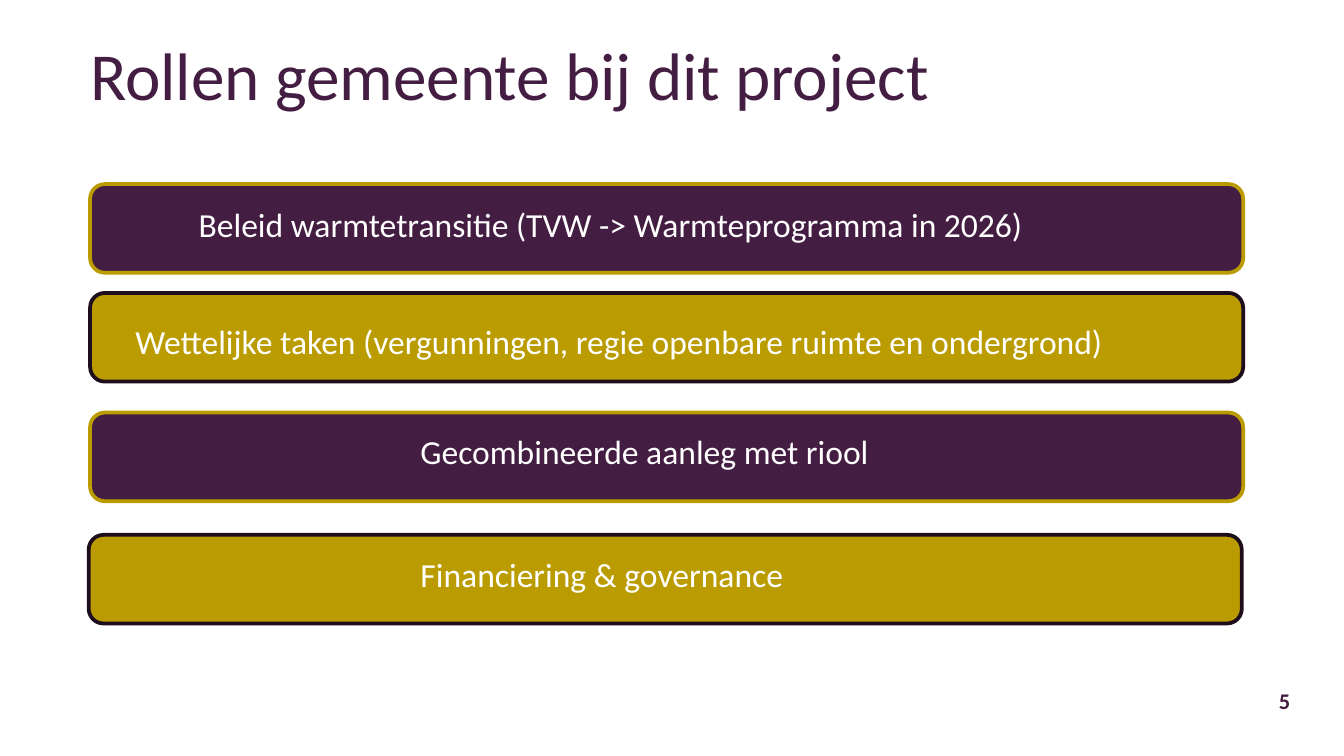
from pptx import Presentation, util as u
from pptx.dml.color import RGBColor
from pptx.enum import shapes, text

PURPLE = RGBColor(0x44, 0x1D, 0x42)
GOLD = RGBColor(0xBB, 0x9C, 0x00)
DARK = RGBColor(0x1E, 0x0D, 0x1D)
WHITE = RGBColor(0xFF, 0xFF, 0xFF)
FONT = "Calibri"
SLIDE_WIDTH = 10
SLIDE_HEIGHT = SLIDE_WIDTH * 9 / 16
BAR_WIDTH, BAR_HEIGHT = 8.58, 0.66
LABEL_HEIGHT = 0.4

ROLES = [
    ("Beleid warmtetransitie (TVW -> Warmteprogramma in 2026)", (0.67, 1.37), (1.38, 1.47, 8.43)),
    ("Wettelijke taken (vergunningen, regie openbare ruimte en ondergrond)", (0.67, 2.18), (0.91, 2.34, 8.43)),
    ("Gecombineerde aanleg met riool", (0.67, 3.07), (3.03, 3.16, 4.17)),
    ("Financiering & governance", (0.66, 3.98), (3.03, 4.07, 4.25)),
]


def inches(box):
    return [u.Inches(length) for length in box]


def add_text(slide, box, words, size=18, color=WHITE, bold=False, align=text.PP_ALIGN.LEFT,
             anchor=text.MSO_ANCHOR.TOP, inset=True, line_spacing=None):
    frame = slide.shapes.add_textbox(*inches(box)).text_frame
    frame.word_wrap = True
    frame.vertical_anchor = anchor
    if not inset:
        frame.margin_left = frame.margin_right = frame.margin_top = frame.margin_bottom = 0
    paragraph = frame.paragraphs[0]
    paragraph.alignment = align
    if line_spacing:
        paragraph.line_spacing = u.Pt(line_spacing)
    run = paragraph.add_run()
    run.text = words
    run.font.name = FONT
    run.font.size = u.Pt(size)
    run.font.bold = bold
    run.font.color.rgb = color


def add_heading(slide, box):
    add_text(slide, box, "Rollen gemeente bij dit project", size=36, color=PURPLE,
             anchor=text.MSO_ANCHOR.MIDDLE, inset=False, line_spacing=38)


def add_page_number(slide, box):
    add_text(slide, box, "5", size=12, color=PURPLE, bold=True, align=text.PP_ALIGN.RIGHT,
             anchor=text.MSO_ANCHOR.MIDDLE, inset=False)


def add_role(slide, bar_box, label_box, label, fill, outline):
    bar = slide.shapes.add_shape(shapes.MSO_SHAPE.ROUNDED_RECTANGLE, *inches(bar_box))
    bar.shadow.inherit = False
    bar.fill.solid()
    bar.fill.fore_color.rgb = fill
    bar.line.color.rgb = outline
    bar.line.width = u.Pt(2)
    add_text(slide, label_box, label)


def main():
    deck = Presentation()
    deck.slide_width, deck.slide_height = inches((SLIDE_WIDTH, SLIDE_HEIGHT))
    slide = deck.slides.add_slide(deck.slide_layouts[6])
    add_heading(slide, (0.67, 0.32, 8.98, 0.53))
    for row, (label, bar_corner, label_place) in enumerate(ROLES):
        fill, outline = [(PURPLE, GOLD), (GOLD, DARK)][row % 2]
        add_role(slide, (*bar_corner, BAR_WIDTH, BAR_HEIGHT), (*label_place, LABEL_HEIGHT),
                 label, fill, outline)
    add_page_number(slide, (7.27, 5.06, 2.33, 0.3))
    deck.save("out.pptx")


if __name__ == "__main__":
    main()
